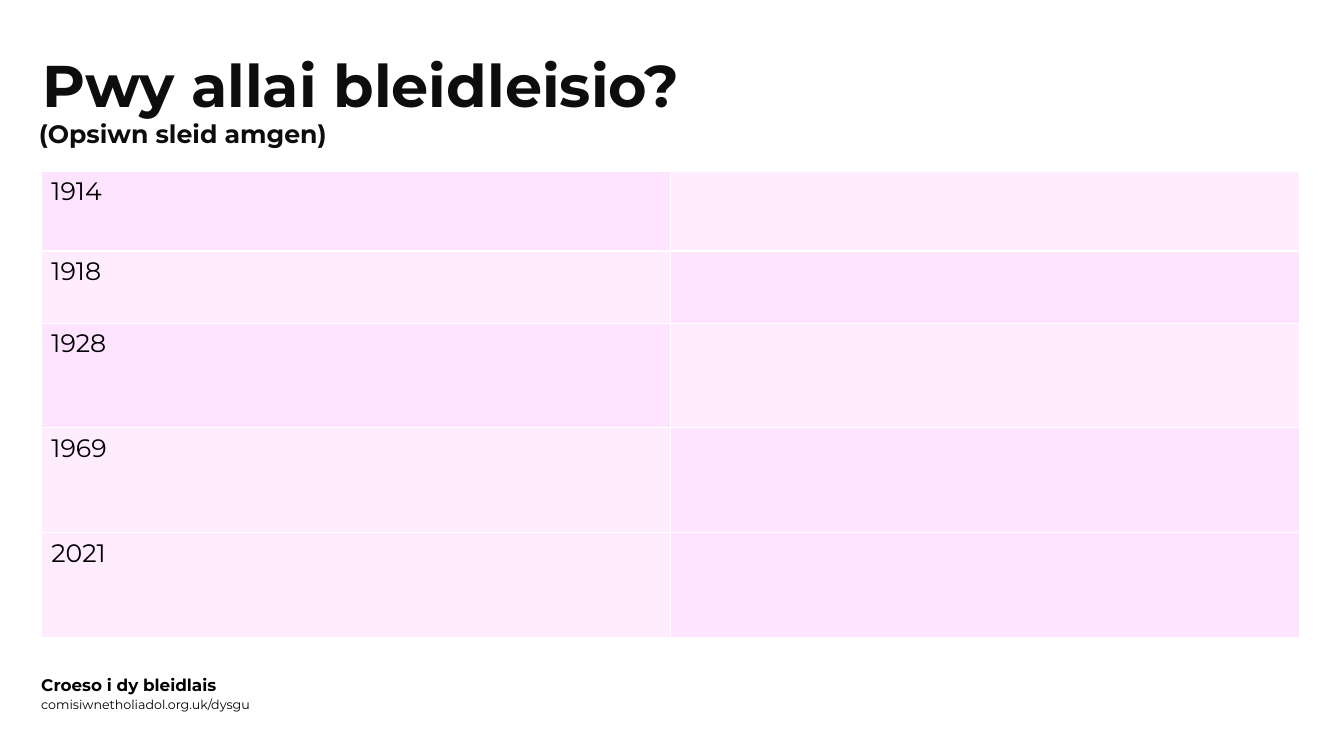
"""Build the voting history slide: a heading, a table of years and a footer."""
from dataclasses import dataclass

from lxml.etree import SubElement
from pptx import Presentation
from pptx.dml.color import RGBColor as RGB
from pptx.enum.text import MSO_ANCHOR as Anchor
from pptx.oxml.ns import qn
from pptx.slide import Slide
from pptx.table import _Cell as Cell
from pptx.text.text import Font
from pptx.util import Emu, Inches, Pt

WIDTH, HEIGHT = Inches(13.33), Inches(7.5)


@dataclass(frozen=True)
class Theme:
    font: str = "Montserrat"
    ink: str = "0D0D0D"
    black: str = "000000"
    pink: str = "FF8BFF"
    border: str = "FFFFFF"
    border_pt: float = 1
    strong: int = 23
    soft: int = 15
    title: int = 42
    body: int = 18
    footer: int = 12
    link: int = 9


@dataclass(frozen=True)
class Label:
    text: str
    x: float
    y: float
    w: float
    h: float
    size: int
    color: str
    bold: bool = True
    spacing: float = 1.0
    anchor: Anchor = Anchor.TOP


@dataclass(frozen=True)
class YearRow:
    year: str
    h: float
    strong_first: bool


THEME = Theme()
LABELS = (
    Label("comisiwnetholiadol.org.uk/dysgu", 2.33, 90.53, 57.39, 5.33,
          THEME.link, THEME.black, bold=False, anchor=Anchor.MIDDLE),
    Label("Pwy allai bleidleisio?", 2.4, 6.8, 82.37, 10,
          THEME.title, THEME.ink, spacing=0.9),
    Label("Croeso i dy bleidlais", 2.33, 87.87, 57.39, 5.33,
          THEME.footer, THEME.black, anchor=Anchor.MIDDLE),
    Label("(Opsiwn sleid amgen)", 2.15, 15.73, 53, 4.67,
          THEME.body, THEME.ink, spacing=0.8),
)
YEARS = (
    YearRow("1914", 10.53, True),
    YearRow("1918", 9.6, False),
    YearRow("1928", 13.8, True),
    YearRow("1969", 13.87, False),
    YearRow("2021", 13.87, False),
)
TABLE_X, TABLE_Y, COLUMN_W = 3.08, 22.67, 46.81


def across(percent: float) -> Emu:
    """Turn a percentage of the slide's width into a length."""
    return Emu(round(WIDTH * percent / 100))


def down(percent: float) -> Emu:
    """Turn a percentage of the slide's height into a length."""
    return Emu(round(HEIGHT * percent / 100))


def style(font: Font, size: int, color: str, bold: bool = False) -> None:
    """Apply the theme's typeface with a size, colour and weight."""
    font.name, font.size, font.bold = THEME.font, Pt(size), bold
    font.color.rgb = RGB.from_string(color)


def add_label(s: Slide, label: Label) -> None:
    """Draw one text box."""
    tf = s.shapes.add_textbox(across(label.x), down(label.y),
                              across(label.w), down(label.h)).text_frame
    tf.word_wrap, tf.vertical_anchor = True, label.anchor
    p = tf.paragraphs[0]
    p.text, p.line_spacing = label.text, label.spacing
    style(p.runs[0].font, label.size, label.color, label.bold)


def paint_cell(cell: Cell, opacity: int) -> None:
    """Give a cell its borders and a translucent fill."""
    cell.fill.solid()
    cell.fill.fore_color.rgb = RGB.from_string(THEME.pink)
    tc_pr = cell._tc.get_or_add_tcPr()
    color = tc_pr.find(qn("a:solidFill")).find(qn("a:srgbClr"))
    SubElement(color, qn("a:alpha"), val=str(opacity * 1000))
    for i, side in enumerate(("lnL", "lnR", "lnT", "lnB")):
        ln = SubElement(tc_pr, qn(f"a:{side}"), w=str(Pt(THEME.border_pt)))
        fill = SubElement(ln, qn("a:solidFill"))
        SubElement(fill, qn("a:srgbClr"), val=THEME.border)
        tc_pr.insert(i, ln)


def add_years(s: Slide, years: tuple[YearRow, ...]) -> None:
    """Draw the table with a year and an empty answer cell in each row."""
    table = s.shapes.add_table(
        len(years), 2, across(TABLE_X), down(TABLE_Y), across(2 * COLUMN_W),
        down(sum(row.h for row in years))).table
    table.first_row = table.horz_banding = False
    for column in table.columns:
        column.width = across(COLUMN_W)
    for i, row in enumerate(years):
        table.rows[i].height = down(row.h)
        shades = (THEME.strong, THEME.soft)
        for j, shade in enumerate(shades if row.strong_first else shades[::-1]):
            paint_cell(table.cell(i, j), shade)
        p = table.cell(i, 0).text_frame.paragraphs[0]
        p.text = row.year
        style(p.runs[0].font, THEME.body, THEME.black)


def main() -> None:
    """Create and save the presentation."""
    prs = Presentation()
    prs.slide_width, prs.slide_height = WIDTH, HEIGHT
    s = prs.slides.add_slide(prs.slide_layouts[6])
    for label in LABELS:
        add_label(s, label)
    add_years(s, YEARS)
    prs.save("out.pptx")


if __name__ == "__main__":
    main()
